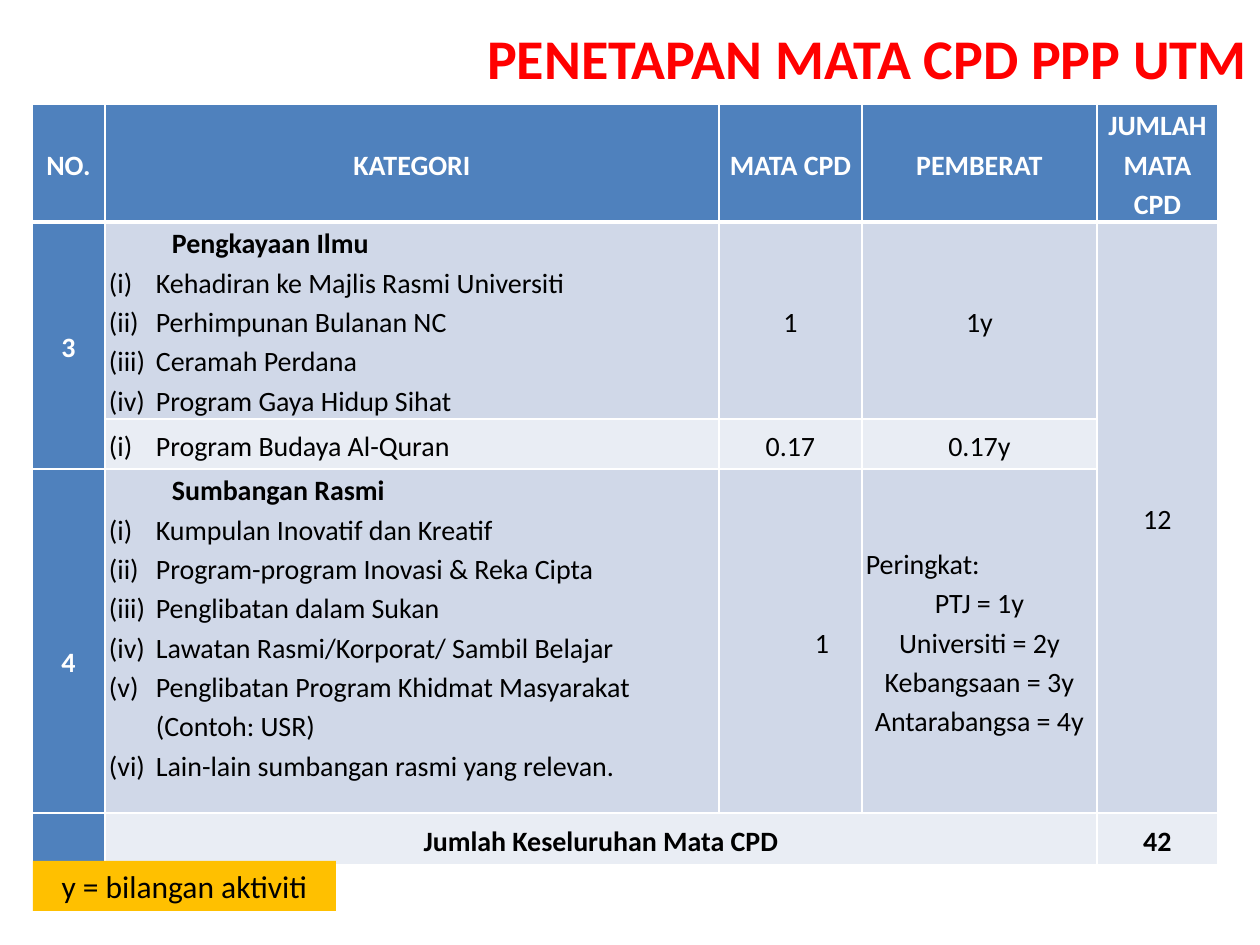
from lxml.etree import SubElement
from pptx import Presentation
from pptx.dml.color import RGBColor
from pptx.enum.shapes import MSO_SHAPE
from pptx.enum.text import MSO_ANCHOR, PP_ALIGN
from pptx.oxml import parse_xml
from pptx.oxml.ns import nsdecls, qn
from pptx.util import Pt

PX = 914400 // 126
FONT = "Calibri"
COLORS = {
    "title": "FF0000", "header": "4F81BD", "band": "D0D8E8", "light": "E9EDF4",
    "note": "FFC000", "white": "FFFFFF", "black": "000000",
}

TITLE = "PENETAPAN MATA CPD PPP UTM"
NOTE = "y = bilangan aktiviti"
TITLE_BOX = (355, -21, 905, 157)
TABLE_BOX = (32, 104, 1186, 760)
NOTE_BOX = (33, 861, 303, 50)
COLUMN_WIDTHS = [73, 614, 143, 235, 121]
ROW_HEIGHTS = [117, 197, 50, 344, 52]
SIDE_MARGIN, HEADING_INDENT, ITEM_INDENT, LINE_HEIGHT = 4, 63, 47, 39

HEADERS = ["NO.", "KATEGORI", "MATA CPD", "PEMBERAT", "JUMLAH MATA CPD"]
KNOWLEDGE = ["Kehadiran ke Majlis Rasmi Universiti", "Perhimpunan Bulanan NC",
             "Ceramah Perdana", "Program Gaya Hidup Sihat"]
CONTRIBUTIONS = ["Kumpulan Inovatif dan Kreatif", "Program-program Inovasi & Reka Cipta",
                 "Penglibatan dalam Sukan", "Lawatan Rasmi/Korporat/ Sambil Belajar",
                 "Penglibatan Program Khidmat Masyarakat (Contoh: USR)",
                 "Lain-lain sumbangan rasmi yang relevan."]
LEVELS = ["PTJ = 1y", "Universiti = 2y", "Kebangsaan = 3y", "Antarabangsa = 4y"]


def styled(style, texts):
    return [(style, text) for text in texts]


# (row, column): list of (paragraph style, text)
CELLS = {
    **{(0, column): [("label", text)] for column, text in enumerate(HEADERS)},
    (1, 0): [("label", "3")],
    (1, 1): [("heading", "Pengkayaan Ilmu")] + styled("item", KNOWLEDGE),
    (1, 2): [("value", "1")],
    (1, 3): [("value", "1y")],
    (1, 4): [("value", "12")],
    (2, 1): [("item", "Program Budaya Al-Quran")],
    (2, 2): [("value", "0.17")],
    (2, 3): [("value", "0.17y")],
    (3, 0): [("label", "4")],
    (3, 1): [("heading", "Sumbangan Rasmi")] + styled("item", CONTRIBUTIONS),
    (3, 2): [("indented", "1")],
    (3, 3): [("plain", "Peringkat:")] + styled("value", LEVELS),
    (4, 1): [("total", "Jumlah Keseluruhan Mata CPD")],
    (4, 4): [("total", "42")],
}
MERGES = [((1, 0), (2, 0)), ((1, 4), (3, 4)), ((4, 1), (4, 3))]
TOP_ANCHORED = {(1, 1), (3, 1)}

# style: alignment, bold, colour, left indent
STYLES = {
    "label": (PP_ALIGN.CENTER, True, "white", 0),
    "heading": (PP_ALIGN.LEFT, True, "black", HEADING_INDENT),
    "item": (PP_ALIGN.LEFT, False, "black", ITEM_INDENT),
    "value": (PP_ALIGN.CENTER, False, "black", 0),
    "indented": (PP_ALIGN.CENTER, False, "black", HEADING_INDENT),
    "plain": (PP_ALIGN.LEFT, False, "black", 0),
    "total": (PP_ALIGN.CENTER, True, "black", 0),
}


def color(name):
    return RGBColor.from_string(COLORS[name])


def scaled(box):
    return [length * PX for length in box]


def set_attributes(target, values):
    for name, value in values.items():
        setattr(target, name, value)


def paint(target, name):
    target.fill.solid()
    target.fill.fore_color.rgb = color(name)


def write(paragraph, text, size, color_name, bold, alignment):
    paragraph.alignment = alignment
    run = paragraph.add_run()
    run.text = text
    set_attributes(run.font, {"name": FONT, "size": Pt(size), "bold": bold})
    run.font.color.rgb = color(color_name)


def write_cell(cell, content):
    for index, (style, text) in enumerate(content):
        alignment, bold, color_name, indent = STYLES[style]
        frame = cell.text_frame
        paragraph = frame.add_paragraph() if index else frame.paragraphs[0]
        paragraph.line_spacing = 1.15
        properties = paragraph._p.get_or_add_pPr()
        properties.set("marL", str(indent * PX))
        properties.set("indent", str(-indent * PX if style == "item" else 0))
        if style == "item":
            SubElement(properties, qn("a:buFont"), typeface="+mj-lt")
            SubElement(properties, qn("a:buAutoNum"), type="romanLcParenBoth")
        write(paragraph, text, 16, color_name, bold, alignment)


def add_borders(cell, widths):
    properties = cell._tc.get_or_add_tcPr()
    for index, (side, width) in enumerate(widths.items()):
        properties.insert(index, parse_xml(
            f'<a:ln{side} {nsdecls("a")} w="{Pt(width)}"><a:solidFill>'
            f'<a:srgbClr val="{COLORS["white"]}"/></a:solidFill></a:ln{side}>'))


def cell_color(row, column):
    if row == 0 or column == 0:
        return "header"
    if row == 4 or (row == 2 and column < 4):
        return "light"
    return "band"


def add_points_table(slide):
    shape = slide.shapes.add_table(len(ROW_HEIGHTS), len(COLUMN_WIDTHS), *scaled(TABLE_BOX))
    table = shape.table
    table.horz_banding = False
    for column, width in zip(table.columns, COLUMN_WIDTHS):
        column.width = width * PX
    for row, height in zip(table.rows, ROW_HEIGHTS):
        row.height = height * PX
    for first, last in MERGES:
        table.cell(*first).merge(table.cell(*last))
    for row in range(len(ROW_HEIGHTS)):
        for column in range(len(COLUMN_WIDTHS)):
            cell = table.cell(row, column)
            anchor = MSO_ANCHOR.TOP if (row, column) in TOP_ANCHORED else MSO_ANCHOR.MIDDLE
            set_attributes(cell, {
                "margin_left": SIDE_MARGIN * PX, "margin_right": SIDE_MARGIN * PX,
                "margin_top": 0, "margin_bottom": 0, "vertical_anchor": anchor})
            paint(cell, cell_color(row, column))
            add_borders(cell, {"L": 1, "R": 1, "T": 3 if row == 1 else 1,
                               "B": 3 if row == 0 else 1})
            write_cell(cell, CELLS.get((row, column), []))
    table.cell(3, 0).margin_top = LINE_HEIGHT * PX
    table.cell(3, 2).margin_bottom = 0


def add_title(slide):
    title = slide.shapes.title
    set_attributes(title, dict(zip(("left", "top", "width", "height"), scaled(TITLE_BOX))))
    title.text_frame.vertical_anchor = MSO_ANCHOR.MIDDLE
    write(title.text_frame.paragraphs[0], TITLE, 32, "title", True, PP_ALIGN.RIGHT)


def add_note(slide):
    note = slide.shapes.add_shape(MSO_SHAPE.RECTANGLE, *scaled(NOTE_BOX))
    note.shadow.inherit = False
    paint(note, "note")
    note.line.fill.background()
    note.text_frame.word_wrap = True
    write(note.text_frame.paragraphs[0], NOTE, 18, "black", False, PP_ALIGN.CENTER)


def main():
    presentation = Presentation()
    presentation.slide_width, presentation.slide_height = 1260 * PX, 945 * PX
    slide = presentation.slides.add_slide(presentation.slide_layouts[5])
    add_title(slide)
    add_points_table(slide)
    add_note(slide)
    presentation.save("out.pptx")


if __name__ == "__main__":
    main()
